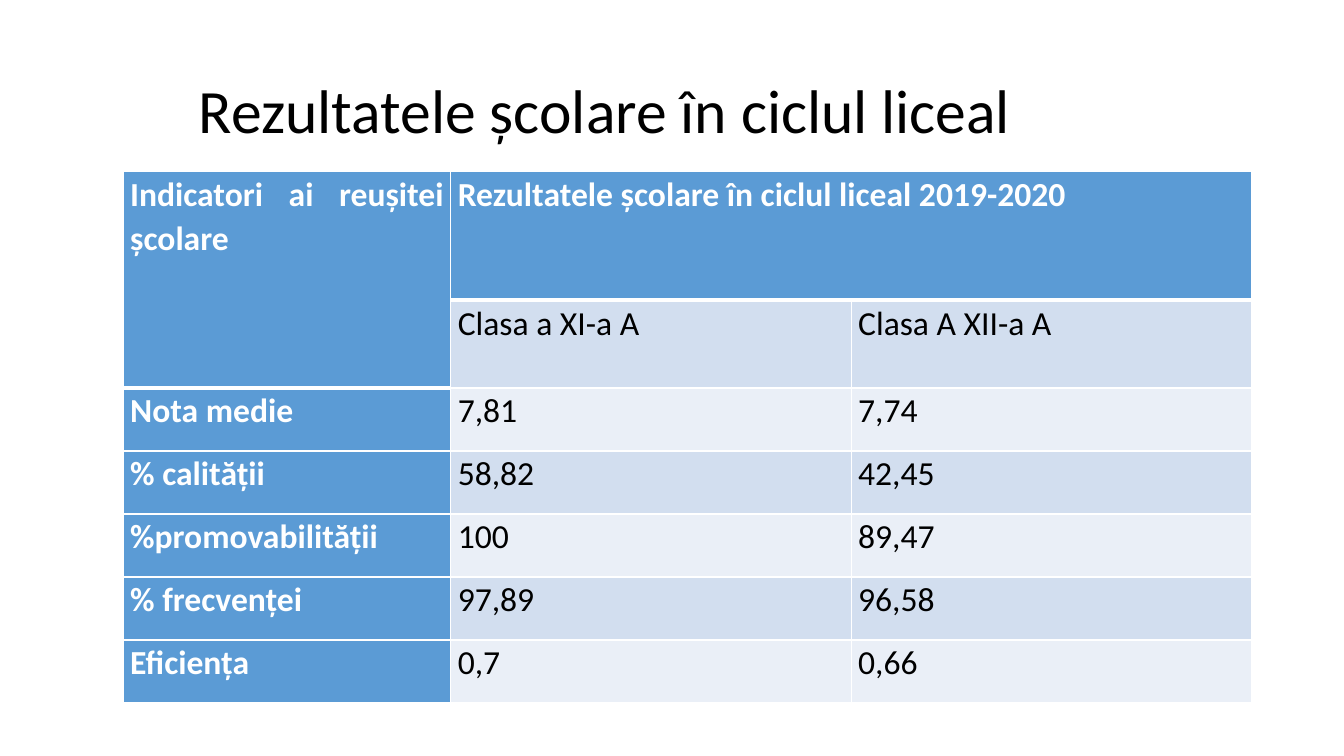
from dataclasses import dataclass

from lxml import etree
from pptx import Presentation
from pptx import util as u
from pptx.dml.color import RGBColor
from pptx.enum import text
from pptx.oxml import ns

FONT = "Calibri"
BLACK, WHITE, BLUE = "000000", "FFFFFF", "5B9BD5"
BANDS = ("D2DEEF", "EAEFF7")
TITLE = "Rezultatele școlare în ciclul liceal"
COLUMN_WIDTHS = (234, 286, 286)
HEADER_HEIGHT, ROW_HEIGHT = 92, 45
THIN, THICK = 1, 3


@dataclass(frozen=True)
class ResultRow:
    indicator: str
    class_xi: str
    class_xii: str


ROWS = (
    ResultRow("Indicatori ai reușitei școlare", "Rezultatele școlare în ciclul liceal 2019-2020", ""),
    ResultRow("", "Clasa a XI-a A", "Clasa A XII-a A"),
    ResultRow("Nota medie", "7,81", "7,74"),
    ResultRow("% calității", "58,82", "42,45"),
    ResultRow("%promovabilității", "100", "89,47"),
    ResultRow("% frecvenței", "97,89", "96,58"),
    ResultRow("Eficiența", "0,7", "0,66"),
)


def color(value: str) -> RGBColor:
    return RGBColor.from_string(value)


def format_text(frame, size: float, ink: str, bold: bool, align, spacing: float) -> None:
    for para in frame.paragraphs:
        para.alignment = align
        para.line_spacing = spacing
        for span in para.runs:
            span.font.name = FONT
            span.font.size = u.Pt(size)
            span.font.bold = bold
            span.font.color.rgb = color(ink)


def set_borders(cell, top: float, bottom: float) -> None:
    properties = cell._tc.get_or_add_tcPr()
    for side, width in (("L", THIN), ("R", THIN), ("T", top), ("B", bottom)):
        line = etree.SubElement(properties, ns.qn(f"a:ln{side}"), w=str(u.Pt(width)))
        fill = etree.SubElement(line, ns.qn("a:solidFill"))
        etree.SubElement(fill, ns.qn("a:srgbClr"), val=WHITE)


def header_edge(column: int) -> int:
    """Return the last header row of a column."""
    return 1 if column == 0 else 0


def style_cell(cell, row: int, column: int, wording: str) -> None:
    edge = header_edge(column)
    is_header = column == 0 or row == 0
    set_borders(cell, THICK if row == edge + 1 else THIN, THICK if row == edge else THIN)
    cell.fill.solid()
    cell.fill.fore_color.rgb = color(BLUE if is_header else BANDS[(row - 1) % 2])
    cell.margin_left = cell.margin_right = u.Pt(5)
    cell.margin_top = cell.margin_bottom = u.Pt(0)
    cell.text_frame.text = wording
    format_text(cell.text_frame, 24, WHITE if is_header else BLACK, is_header,
                text.PP_ALIGN.JUSTIFY, 1.07)


def add_title(page) -> None:
    box = page.shapes.title
    box.left, box.top, box.width, box.height = u.Pt(66), u.Pt(28.8), u.Pt(828), u.Pt(104.4)
    frame = box.text_frame
    frame.text = TITLE
    frame.word_wrap = True
    frame.auto_size = text.MSO_AUTO_SIZE.NONE
    frame.vertical_anchor = text.MSO_ANCHOR.MIDDLE
    frame.margin_left = u.Pt(76)
    format_text(frame, 44, BLACK, False, text.PP_ALIGN.LEFT, 0.9)


def add_results(page) -> None:
    heights = (HEADER_HEIGHT,) + (ROW_HEIGHT,) * (len(ROWS) - 1)
    table = page.shapes.add_table(
        len(ROWS), len(COLUMN_WIDTHS), u.Pt(88), u.Pt(122.5),
        u.Pt(sum(COLUMN_WIDTHS)), u.Pt(sum(heights))).table
    for column, width in zip(table.columns, COLUMN_WIDTHS):
        column.width = u.Pt(width)
    for row, height in zip(table.rows, heights):
        row.height = u.Pt(height)
    for r, result in enumerate(ROWS):
        for c, wording in enumerate((result.indicator, result.class_xi, result.class_xii)):
            style_cell(table.cell(r, c), r, c, wording)
    # Merged headings
    table.cell(0, 0).merge(table.cell(1, 0))
    table.cell(0, 1).merge(table.cell(0, 2))


def main() -> None:
    # Deck and page
    deck = Presentation()
    deck.slide_width, deck.slide_height = u.Pt(960), u.Pt(540)
    page = deck.slides.add_slide(deck.slide_layouts.get_by_name("Title Only"))
    # Content
    add_title(page)
    add_results(page)
    deck.save("out.pptx")


if __name__ == "__main__":
    main()
